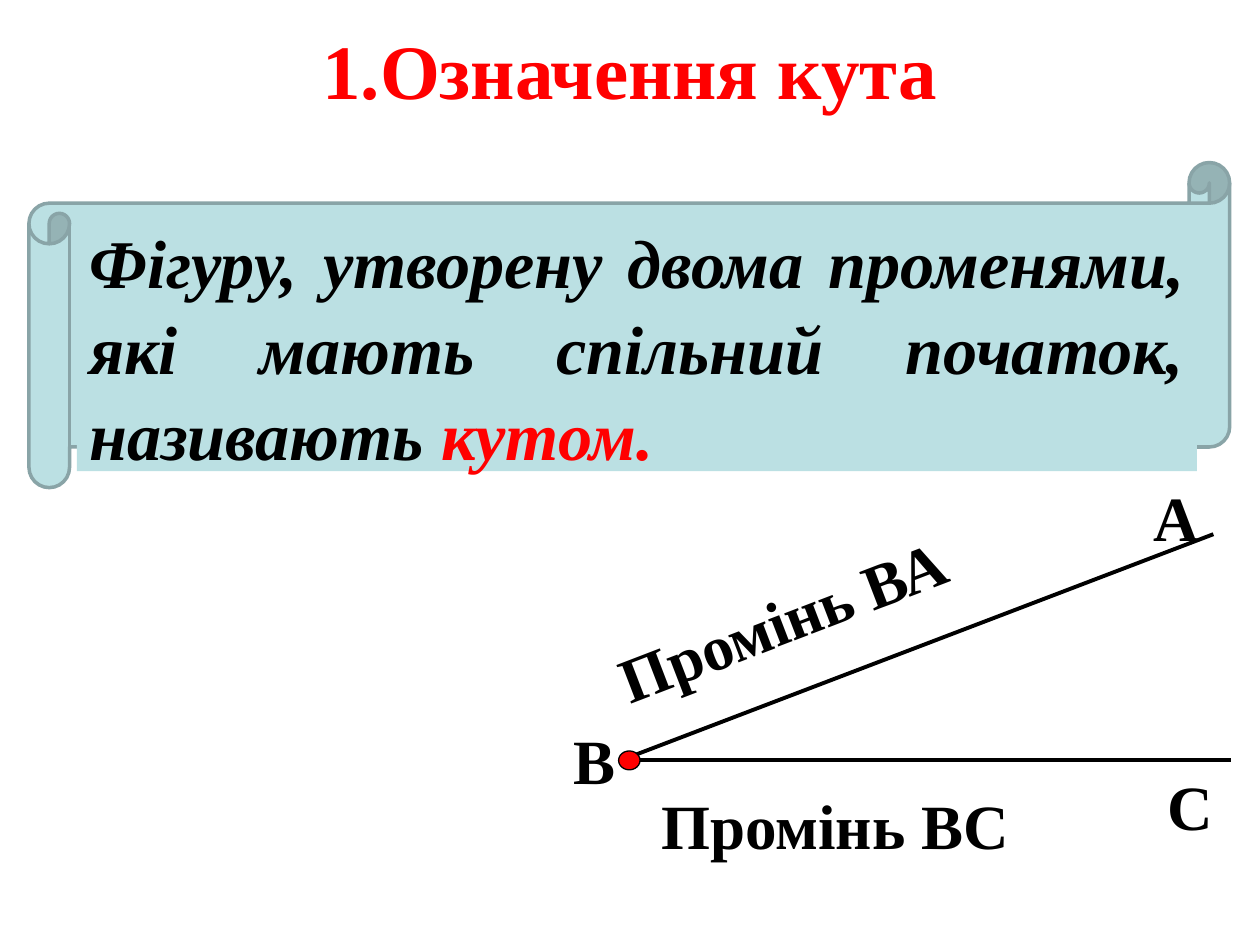
"""Build a slide that defines an angle and shows its two rays."""
from dataclasses import dataclass

from lxml.etree import SubElement
from pptx import Presentation
from pptx.dml.color import RGBColor
from pptx.enum.shapes import MSO_CONNECTOR, MSO_SHAPE
from pptx.enum.text import MSO_ANCHOR, PP_ALIGN
from pptx.oxml.ns import qn
from pptx.util import Inches, Pt


@dataclass(frozen=True)
class Theme:
    font: str = "Times New Roman"
    ink: RGBColor = RGBColor(0, 0, 0)
    accent: RGBColor = RGBColor(255, 0, 0)
    paper: RGBColor = RGBColor(0xBB, 0xE0, 0xE3)
    paper_edge: RGBColor = RGBColor(0x89, 0xA4, 0xA7)
    title_size: float = 44
    label_size: float = 36
    definition_size: float = 39


@dataclass(frozen=True)
class Label:
    text: str
    left: float
    top: float
    width: float = 0.7
    rotation: float = 0


@dataclass(frozen=True)
class Ray:
    start: tuple[float, float]
    end: tuple[float, float]


THEME = Theme()
LABELS = (
    Label("В", 4.45, 5.68),
    Label("Промінь ВС", 5.15, 6.19, 3.45),
    Label("А", 9.06, 3.75),
    Label("С", 9.17, 6.04),
    Label("Промінь ВА", 4.73, 4.47, 3.45, 339),
)
RAYS = (Ray((4.94, 6.03), (9.63, 4.24)), Ray((5, 6.03), (9.77, 6.03)))


def format_span(span, size: float, color: RGBColor, italic: bool = False) -> None:
    font = span.font
    font.name, font.size = THEME.font, Pt(size)
    font.bold, font.italic = True, italic
    font.color.rgb = color


def add_title(page, text: str) -> None:
    title = page.shapes.title
    title.left, title.top = Inches(0.5), Inches(-0.08)
    title.width, title.height = Inches(9), Inches(1.25)
    title.text_frame.text = text
    title.text_frame.vertical_anchor = MSO_ANCHOR.MIDDLE
    para = title.text_frame.paragraphs[0]
    para.alignment = PP_ALIGN.CENTER
    format_span(para.runs[0], THEME.title_size, THEME.accent)


def add_ray(page, ray: Ray) -> None:
    line = page.shapes.add_connector(
        MSO_CONNECTOR.STRAIGHT, *map(Inches, ray.start + ray.end))
    line.line.color.rgb = THEME.ink
    line.line.width = Pt(2.25)
    SubElement(line._element.spPr, qn("a:effectLst"))


def add_label(page, label: Label) -> None:
    box = page.shapes.add_textbox(
        *map(Inches, (label.left, label.top, label.width, 0.71)))
    box.rotation = label.rotation
    box.text_frame.word_wrap = True
    box.text_frame.text = label.text
    format_span(box.text_frame.paragraphs[0].runs[0], THEME.label_size, THEME.ink)


def add_figure(page, kind: MSO_SHAPE, area: tuple[float, ...], fill: RGBColor,
               edge: RGBColor | None = None, edge_width: float = 0):
    figure = page.shapes.add_shape(kind, *map(Inches, area))
    figure.shadow.inherit = False
    figure.fill.solid()
    figure.fill.fore_color.rgb = fill
    if edge is None:
        figure.line.fill.background()
    else:
        figure.line.color.rgb = edge
        figure.line.width = Pt(edge_width)
    return figure


def add_definition(page, text: str, term: str) -> None:
    add_figure(page, MSO_SHAPE.HORIZONTAL_SCROLL, (0.23, 1.29, 9.53, 2.58),
               THEME.paper, THEME.paper_edge, 2)
    panel = add_figure(page, MSO_SHAPE.RECTANGLE, (0.61, 1.67, 8.89, 2.07), THEME.paper)
    frame = panel.text_frame
    frame.word_wrap = True
    frame.vertical_anchor = MSO_ANCHOR.TOP
    para = frame.paragraphs[0]
    para.alignment = PP_ALIGN.JUSTIFY
    para.line_spacing = 1.05
    for words, color in ((text, THEME.ink), (term, THEME.accent)):
        span = para.add_run()
        span.text = words
        format_span(span, THEME.definition_size, color, italic=True)


def main() -> None:
    deck = Presentation()
    deck.slide_width, deck.slide_height = Inches(10), Inches(7.5)
    page = deck.slides.add_slide(deck.slide_layouts[5])
    add_title(page, "1.Означення кута")
    for ray in RAYS:
        add_ray(page, ray)
    for label in LABELS:
        add_label(page, label)
    add_definition(
        page, "Фігуру, утворену двома променями, які мають спільний початок, називають ",
        "кутом.")
    add_figure(page, MSO_SHAPE.OVAL, (4.91, 5.96, 0.17, 0.15),
               THEME.accent, THEME.ink, 0.75)
    deck.save("out.pptx")


if __name__ == "__main__":
    main()
